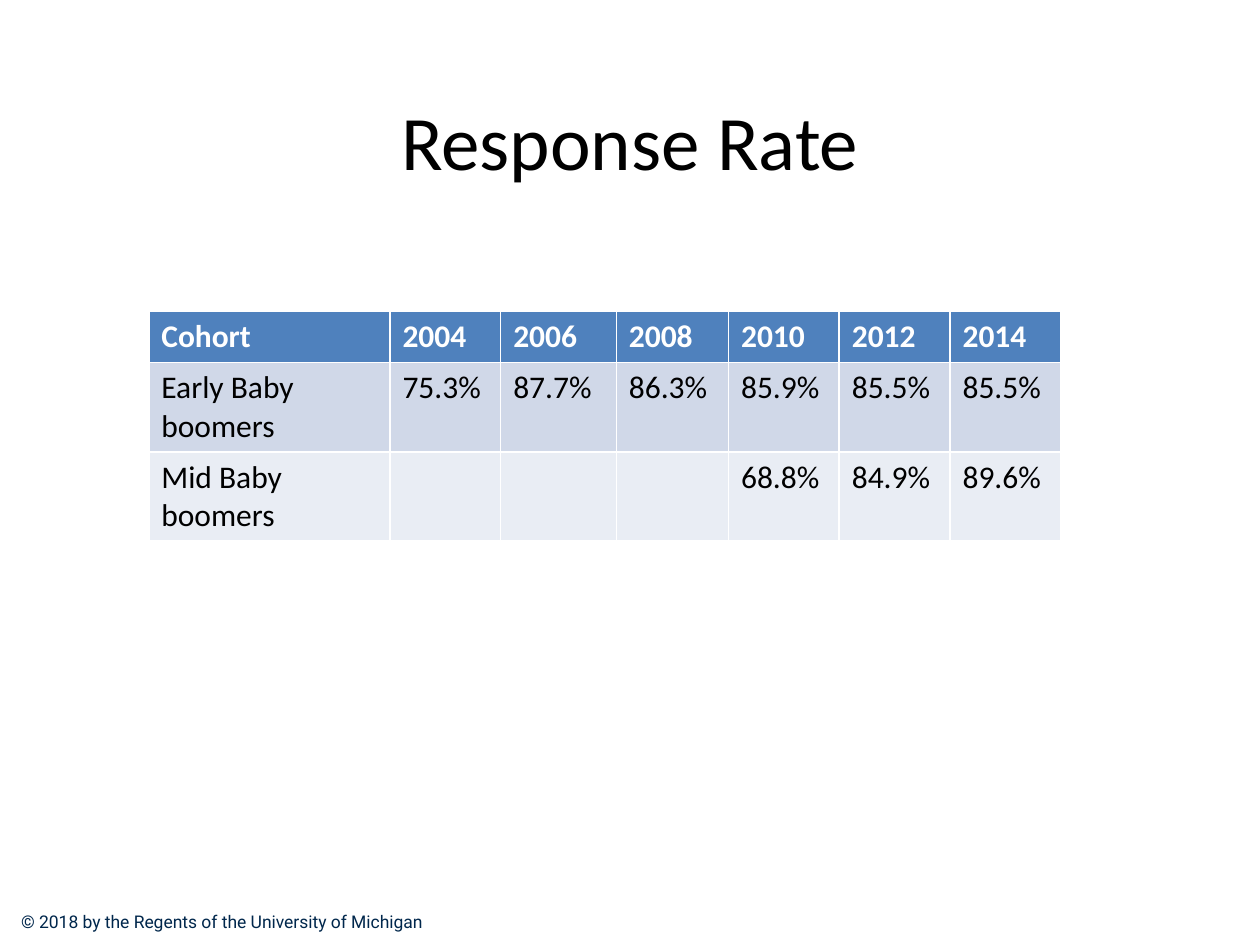
import pptx
import pptx.dml.color
import pptx.enum.text
import pptx.util

Pt = pptx.util.Pt


def color(hex_string):
    return pptx.dml.color.RGBColor.from_string(hex_string)


def style(paragraph, name, size, hex_string, bold=False):
    paragraph.font.name = name
    paragraph.font.size = Pt(size)
    paragraph.font.bold = bold
    paragraph.font.color.rgb = color(hex_string)


deck = pptx.Presentation()
deck.slide_width = Pt(720)
deck.slide_height = Pt(540)
page = deck.slides.add_slide(deck.slide_layouts[6])

# Copyright line
footer = page.shapes.add_textbox(Pt(5), Pt(517), Pt(253), Pt(19.4)).text_frame
footer.word_wrap = False
footer.text = "© 2018 by the Regents of the University of Michigan"
style(footer.paragraphs[0], "Roboto", 10, "00274C")

# Title
title = page.shapes.add_textbox(Pt(36), Pt(48), Pt(648), Pt(63.4)).text_frame
title.word_wrap = True
title.vertical_anchor = pptx.enum.text.MSO_ANCHOR.MIDDLE
title.text = "Response Rate"
title.paragraphs[0].alignment = pptx.enum.text.PP_ALIGN.CENTER
style(title.paragraphs[0], "Calibri", 44, "000000")

# Response rates; the default table style supplies the white cell borders
rows = [
    ["Cohort", "2004", "2006", "2008", "2010", "2012", "2014"],
    ["Early Baby boomers", "75.3%", "87.7%", "86.3%", "85.9%", "85.5%", "85.5%"],
    ["Mid Baby boomers", "", "", "", "68.8%", "84.9%", "89.6%"],
]
column_widths = [137.8, 63.3, 66.1, 64.1, 63.3, 63.3, 63.3]
row_heights = [29.2, 51, 51]
row_fills = ["4F81BD", "D0D8E8", "E9EDF4"]

table = page.shapes.add_table(
    len(rows), len(column_widths), Pt(85), Pt(178),
    Pt(sum(column_widths)), Pt(sum(row_heights)),
).table
for column, width in zip(table.columns, column_widths):
    column.width = Pt(width)

for row_index, values in enumerate(rows):
    is_header = row_index == 0
    table.rows[row_index].height = Pt(row_heights[row_index])
    for column_index, value in enumerate(values):
        cell = table.cell(row_index, column_index)
        cell.fill.solid()
        cell.fill.fore_color.rgb = color(row_fills[row_index])
        cell.text = value
        style(cell.text_frame.paragraphs[0], "Calibri", 18,
              "FFFFFF" if is_header else "000000", is_header)

deck.save("out.pptx")
